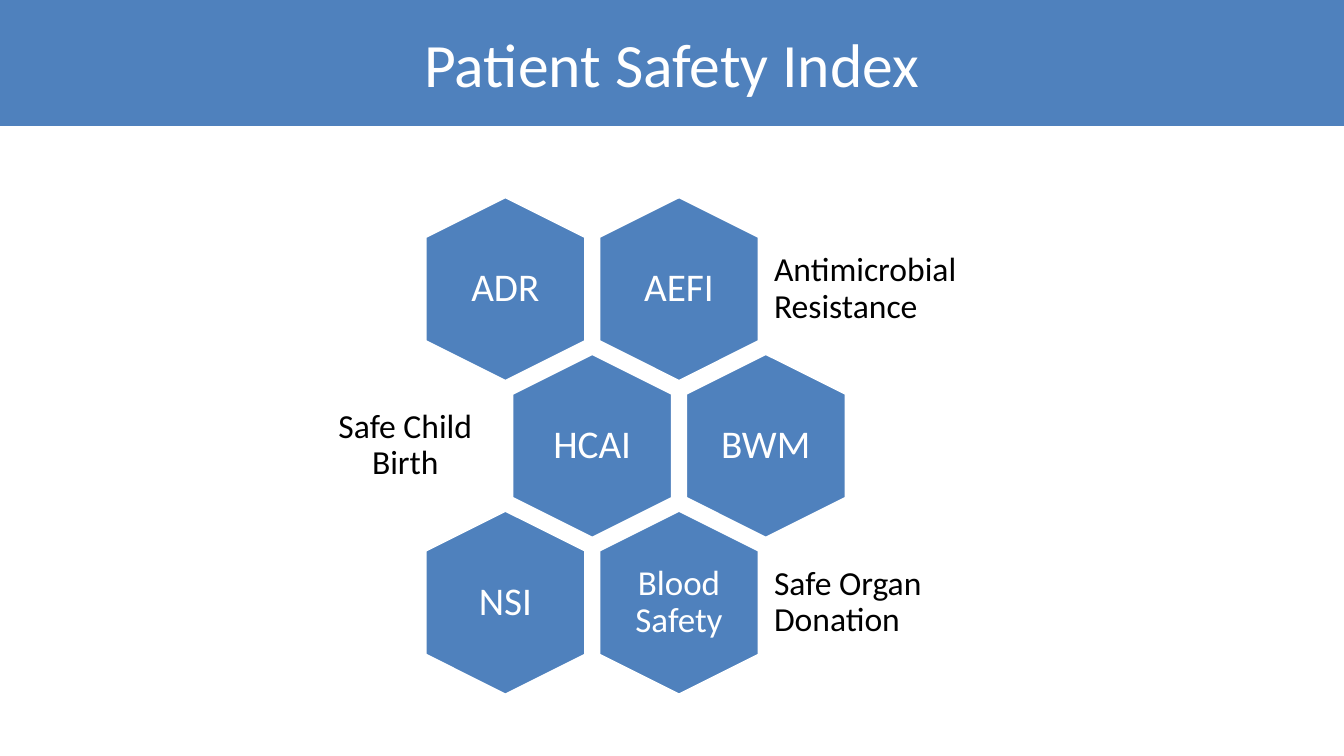
import pptx
import pptx.dml.color
import pptx.enum.shapes
import pptx.enum.text
import pptx.util

Pt = pptx.util.Pt
RGBColor = pptx.dml.color.RGBColor
PP_ALIGN = pptx.enum.text.PP_ALIGN

# Content
TITLE = "Patient Safety Index"
HEXAGONS = [  # row, column, label, text size
    (0, 1, "AEFI", 28),
    (0, 0, "ADR", 28),
    (1, 0, "HCAI", 28),
    (1, 1, "BWM", 28),
    (2, 1, "Blood Safety", 25),
    (2, 0, "NSI", 28),
]
SIDE_LABELS = [  # row, left, width, text, alignment
    (0, 545.8, 147.6, "Antimicrobial Resistance", PP_ALIGN.LEFT),
    (1, 218.2, 142.6, "Safe Child Birth", PP_ALIGN.CENTER),
    (2, 545.8, 147.6, "Safe Organ Donation", PP_ALIGN.LEFT),
]

# Look
BLUE = RGBColor(0x4F, 0x81, 0xBD)
WHITE = RGBColor(0xFF, 0xFF, 0xFF)
BLACK = RGBColor(0x00, 0x00, 0x00)
FONT = "Calibri"

# Honeycomb geometry, in points
SLIDE_W, SLIDE_H, BANNER_H = 960, 540, 90
FIRST_X, FIRST_Y = 361, 206.5
STEP_X, STEP_Y = 124, 112
HEX_LENGTH, HEX_WIDTH = 131.8, 114.5
LABEL_W, LABEL_H = 79.2, 90.7
SIDE_H = 79.2


def set_all(target, values):
    for name, value in values.items():
        setattr(target, name, value)


def row_center(row):
    return FIRST_Y + row * STEP_Y


def write(frame, text, size, color, align, inset=0, spacing=0.9):
    margin = Pt(inset)
    set_all(frame, {
        "text": text, "word_wrap": True,
        "vertical_anchor": pptx.enum.text.MSO_ANCHOR.MIDDLE,
        "auto_size": pptx.enum.text.MSO_AUTO_SIZE.NONE,
        "margin_left": margin, "margin_right": margin,
        "margin_top": margin, "margin_bottom": margin,
    })
    paragraph = frame.paragraphs[0]
    set_all(paragraph, {"alignment": align, "line_spacing": spacing})
    font = paragraph.runs[0].font
    set_all(font, {"name": FONT, "size": Pt(size)})
    font.color.rgb = color


def add_hexagon(slide, row, column, label, size):
    # Odd rows sit half a step to the right
    x = FIRST_X + (column + row % 2 / 2) * STEP_X
    y = row_center(row)
    cell = slide.shapes.add_shape(
        pptx.enum.shapes.MSO_SHAPE.HEXAGON,
        Pt(x - HEX_LENGTH / 2), Pt(y - HEX_WIDTH / 2),
        Pt(HEX_LENGTH), Pt(HEX_WIDTH))
    cell.rotation = 90
    cell.adjustments[0] = 0.25
    cell.shadow.inherit = False
    cell.fill.solid()
    cell.fill.fore_color.rgb = BLUE
    cell.line.color.rgb = WHITE
    cell.line.width = Pt(2)
    # Upright label over the turned hexagon
    caption = slide.shapes.add_textbox(
        Pt(x - LABEL_W / 2), Pt(y - LABEL_H / 2), Pt(LABEL_W), Pt(LABEL_H))
    write(caption.text_frame, label, size, WHITE, PP_ALIGN.CENTER)


def main():
    deck = pptx.Presentation()
    set_all(deck, {"slide_width": Pt(SLIDE_W), "slide_height": Pt(SLIDE_H)})
    slide = deck.slides.add_slide(deck.slide_layouts.get_by_name("Title Only"))

    # Title banner
    banner = slide.shapes.title
    set_all(banner, {"left": Pt(0), "top": Pt(0),
                     "width": Pt(SLIDE_W), "height": Pt(BANNER_H)})
    banner.fill.solid()
    banner.fill.fore_color.rgb = BLUE
    write(banner.text_frame, TITLE, 44, WHITE, PP_ALIGN.CENTER, 4, 1.0)

    # Honeycomb
    for hexagon in HEXAGONS:
        add_hexagon(slide, *hexagon)

    # Labels beside the honeycomb
    for row, left, width, text, align in SIDE_LABELS:
        side = slide.shapes.add_textbox(
            Pt(left), Pt(row_center(row) - SIDE_H / 2), Pt(width), Pt(SIDE_H))
        write(side.text_frame, text, 24, BLACK, align, 7.2)

    deck.save("out.pptx")


if __name__ == "__main__":
    main()
